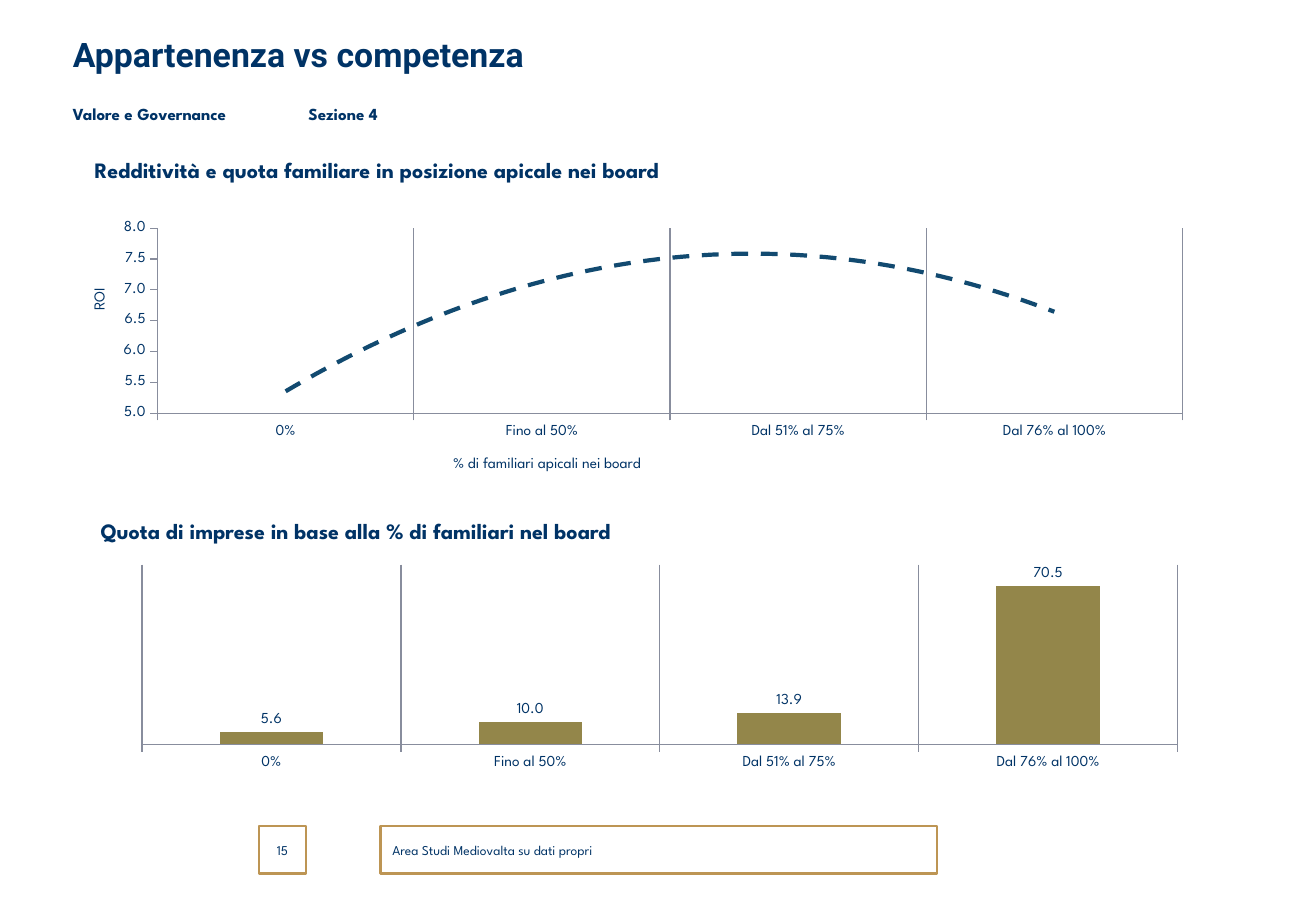
from lxml import etree
from pptx import Presentation
from pptx.chart.data import CategoryChartData
from pptx.dml.color import RGBColor
from pptx.enum.chart import XL_CHART_TYPE as ChartType
from pptx.enum.chart import XL_LABEL_POSITION as LabelPosition
from pptx.enum.chart import XL_MARKER_STYLE as Marker
from pptx.enum.chart import XL_TICK_MARK as Tick
from pptx.enum.shapes import MSO_SHAPE as Shape
from pptx.enum.text import MSO_ANCHOR as Anchor
from pptx.enum.text import PP_ALIGN as Align
from pptx.oxml import parse_xml
from pptx.oxml.ns import nsdecls, qn
from pptx.util import Emu, Pt

PX = 9144
COLORS = {"navy": "003366", "gold": "BD9554", "olive": "93864A",
          "grey": "888D9D", "trend": "124A70"}
BODY_FONT = "League Spartan"
SHARES = ["0%", "Fino al 50%", "Dal 51% al 75%", "Dal 76% al 100%"]


def px(*lengths):
    """Turn pixel lengths into EMU."""
    return [Emu(length * PX) for length in lengths]


def color(name):
    """Return a palette colour."""
    return RGBColor.from_string(COLORS[name])


def style_font(font, size, name=BODY_FONT, bold=False):
    """Apply the slide's text style."""
    font.name, font.size, font.bold = name, Pt(size), bold
    font.color.rgb = color("navy")


def write(box, text, size, name=BODY_FONT, bold=False, align=Align.LEFT,
          anchor=Anchor.TOP, tab=None):
    """Write one formatted paragraph in a shape."""
    frame = box.text_frame
    frame.word_wrap, frame.vertical_anchor = True, anchor
    frame.margin_left, frame.margin_top, frame.margin_right, frame.margin_bottom = px(10, 5, 10, 5)
    para = frame.paragraphs[0]
    para.alignment = align
    if tab:
        tabs = etree.SubElement(para._p.get_or_add_pPr(), qn("a:tabLst"))
        etree.SubElement(tabs, qn("a:tab"), pos=str(tab * PX), algn="l")
    span = para.add_run()
    span.text = text
    style_font(span.font, size, name, bold)


def add_text(page, place, text, size, **style):
    """Add a text box."""
    write(page.shapes.add_textbox(*px(*place)), text, size, **style)


def add_frame(page, place, text, **style):
    """Add a gold outlined box with small text."""
    box = page.shapes.add_shape(Shape.RECTANGLE, *px(*place))
    box.shadow.inherit = False
    box.fill.background()
    box.line.color.rgb, box.line.width = color("gold"), Pt(1.5)
    write(box, text, 8, anchor=Anchor.MIDDLE, **style)


def set_layout(parent, index, **values):
    """Give a chart part a manual layout."""
    for old in parent.findall(qn("c:layout")):
        parent.remove(old)
    layout = etree.Element(qn("c:layout"))
    manual = etree.SubElement(layout, qn("c:manualLayout"))
    for tag, value in values.items():
        etree.SubElement(manual, qn(f"c:{tag}"), val=str(value))
    parent.insert(index, layout)


def set_line(line):
    """Draw a thin grey line."""
    line.color.rgb, line.width = color("grey"), Pt(0.75)


def title_axis(axis, text, x, y, rotation=0):
    """Add an axis title at a fixed place."""
    title = axis.axis_title
    title.text_frame.text = text
    style_font(title.text_frame.paragraphs[0].runs[0].font, 9)
    body = title.element.find(".//" + qn("a:bodyPr"))
    body.set("rot", str(rotation * 60000))
    body.set("vert", "horz")
    set_layout(title.element, 1, xMode="edge", yMode="edge", x=x, y=y)


def add_chart(page, kind, place, values, plot_area, limits):
    """Add a chart of the four family shares."""
    data = CategoryChartData()
    data.categories = SHARES
    data.add_series("Series 1", values)
    chart = page.shapes.add_chart(kind, *px(*place), data).chart
    chart.has_legend = chart.has_title = False
    style_font(chart.font, 9)
    chart.plots[0].vary_by_categories = False
    x, y, width, height = plot_area
    set_layout(chart.element.find(".//" + qn("c:plotArea")), 0, layoutTarget="inner",
               xMode="edge", yMode="edge", x=x, y=y, w=width, h=height)
    for axis in (chart.category_axis, chart.value_axis):
        axis.major_tick_mark, axis.minor_tick_mark = Tick.OUTSIDE, Tick.NONE
        set_line(axis.format.line)
    chart.category_axis.has_major_gridlines = True
    set_line(chart.category_axis.major_gridlines.format.line)
    chart.value_axis.has_major_gridlines = False
    chart.value_axis.minimum_scale, chart.value_axis.maximum_scale = limits
    return chart


def add_trend(chart):
    """Show a dashed quadratic trend instead of the series line."""
    series = chart.plots[0].series[0]
    series.smooth = False
    series.marker.style = Marker.NONE
    series.format.line.fill.background()
    trend = parse_xml(
        f'<c:trendline {nsdecls("c", "a")}><c:spPr><a:ln w="{Pt(2.5)}"><a:solidFill>'
        f'<a:srgbClr val="{COLORS["trend"]}"/></a:solidFill><a:prstDash val="dash"/></a:ln>'
        '</c:spPr><c:trendlineType val="poly"/><c:order val="2"/>'
        '<c:dispRSqr val="0"/><c:dispEq val="0"/></c:trendline>')
    chart.element.find(".//" + qn("c:cat")).addprevious(trend)


def add_return_chart(page):
    """Add the chart of return by family share."""
    chart = add_chart(page, ChartType.LINE, (74, 170, 927, 224), (5, 8.2, 6.5, 7),
                      (0.06, 0.08, 0.91, 0.68), (5, 8))
    axis = chart.value_axis
    axis.major_unit = 0.5
    axis.tick_labels.number_format = "0.0"
    axis.tick_labels.number_format_is_linked = False
    title_axis(axis, "ROI", 0, 0.29, rotation=-90)
    title_axis(chart.category_axis, "% di familiari apicali nei board", 0.32, 0.91)
    add_trend(chart)


def add_share_chart(page):
    """Add the chart of companies by family share."""
    chart = add_chart(page, ChartType.COLUMN_CLUSTERED, (90, 445, 897, 221),
                      (5.6, 10, 13.9, 70.5), (0.03, 0.09, 0.95, 0.67), (0, 80))
    chart.value_axis.visible = False
    plot = chart.plots[0]
    plot.gap_width = 150
    fill = plot.series[0].format.fill
    fill.solid()
    fill.fore_color.rgb = color("olive")
    plot.has_data_labels = True
    labels = plot.data_labels
    labels.show_value, labels.position = True, LabelPosition.OUTSIDE_END
    labels.number_format, labels.number_format_is_linked = "#,##0.0", False
    style_font(labels.font, 9)


def main():
    """Build and save the slide."""
    deck = Presentation()
    deck.slide_width, deck.slide_height = px(1083, 750)
    page = deck.slides.add_slide(deck.slide_layouts[5])
    title = page.shapes.title
    title.left, title.top, title.width, title.height = px(50, 23, 984, 52)
    write(title, "Appartenenza vs competenza", 20, name="Roboto", bold=True)
    add_text(page, (50, 78, 984, 31), "Valore e Governance \tSezione 4", 10,
             bold=True, anchor=Anchor.MIDDLE, tab=194)
    add_text(page, (68, 124, 1072, 45),
             "Redditività e quota familiare in posizione apicale nei board", 13, bold=True)
    add_text(page, (73, 421, 969, 45),
             "Quota di imprese in base alla % di familiari nel board", 13, bold=True)
    add_return_chart(page)
    add_share_chart(page)
    add_frame(page, (213, 680, 39, 39), "15", align=Align.CENTER)
    add_frame(page, (313, 680, 458, 39), "Area Studi Mediovalta su dati propri")
    deck.save("out.pptx")


if __name__ == "__main__":
    main()
